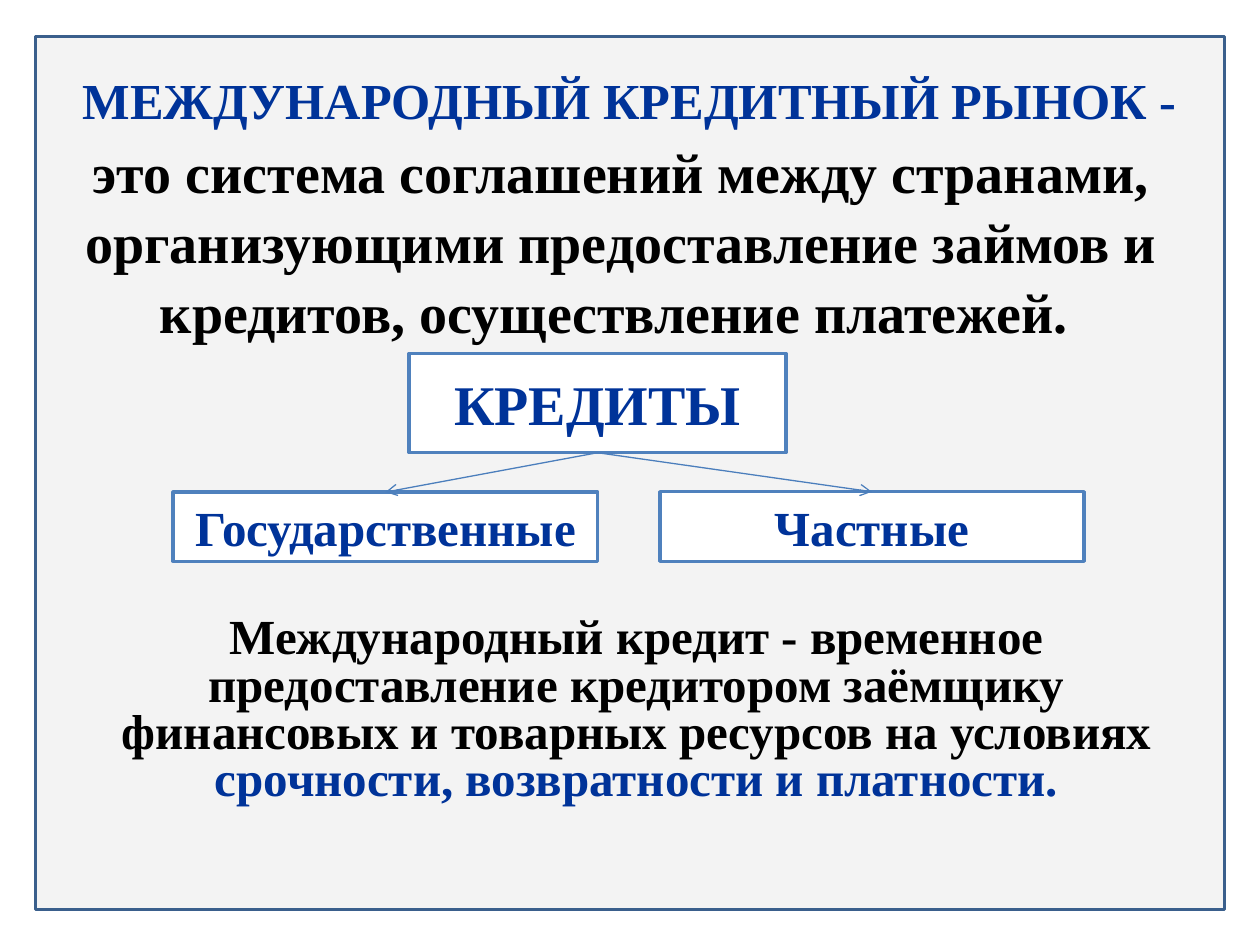
from lxml import etree
from pptx import Presentation
from pptx.dml.color import RGBColor
from pptx.enum.shapes import MSO_CONNECTOR, MSO_SHAPE
from pptx.enum.text import MSO_ANCHOR, PP_ALIGN
from pptx.oxml.ns import qn
from pptx.util import Pt

RECTANGLE = MSO_SHAPE.RECTANGLE
STRAIGHT = MSO_CONNECTOR.STRAIGHT
TOP, MIDDLE = MSO_ANCHOR.TOP, MSO_ANCHOR.MIDDLE
CENTER = PP_ALIGN.CENTER

FONT = "Times New Roman"
BLUE, BLACK, WHITE = "003399", "000000", "FFFFFF"
PANEL, PANEL_EDGE = "F2F2F2", "3A5F8C"
BOX_EDGE, ARROW = "4F81BD", "4B7EBC"

PANEL_AREA = (20.2, 20.9, 679.7, 499)
TEXTS = [
    ((36.7, 25.9, 646.6, 61.2), MIDDLE, 28.8, 1.0, 3.6,
     [("МЕЖДУНАРОДНЫЙ КРЕДИТНЫЙ РЫНОК -", BLUE)]),
    ((31, 71.3, 648, 444.2), TOP, 32, 1.04, 5.6,
     [("это система соглашений между странами, организующими "
       "предоставление займов и кредитов, осуществление платежей. ", BLACK)]),
    ((36.7, 349.2, 653.8, 144.7), TOP, 28, 0.8, 3.6,
     [("Международный кредит - временное предоставление кредитором "
       "заёмщику финансовых и товарных ресурсов на условиях", BLACK),
      ("срочности, возвратности и платности.", BLUE)]),
]
ROOT = ("КРЕДИТЫ", (233.7, 202, 215.6, 56.7), 32)
BRANCHES = [
    ("Государственные", (99, 281.2, 242.6, 39.6), 28),
    ("Частные", (377, 281, 242.4, 39.8), 28),
]


def color(value):
    return RGBColor.from_string(value)


def points(values):
    return [Pt(value) for value in values]


def write(shape, paragraphs, size, anchor, spacing=1.0, inset=3.6):
    frame = shape.text_frame
    frame.word_wrap = True
    frame.vertical_anchor = anchor
    frame.margin_top = Pt(inset)
    for index, (text, ink) in enumerate(paragraphs):
        para = frame.add_paragraph() if index else frame.paragraphs[0]
        para.alignment = CENTER
        para.line_spacing = spacing
        span = para.add_run()
        span.text = text
        span.font.name = FONT
        span.font.size = Pt(size)
        span.font.bold = True
        span.font.color.rgb = color(ink)


def add_box(page, area, fill, edge):
    box = page.shapes.add_shape(RECTANGLE, *points(area))
    box.shadow.inherit = False
    box.fill.solid()
    box.fill.fore_color.rgb = color(fill)
    box.line.color.rgb = color(edge)
    box.line.width = Pt(2)
    return box


def add_label(page, text, area, size):
    box = add_box(page, area, WHITE, BOX_EDGE)
    write(box, [(text, BLUE)], size, MIDDLE)


def add_arrow(page, parent, child):
    left, top, width, height = parent
    start = (left + width / 2, top + height)
    end = (child[0] + child[2] / 2, child[1])
    arrow = page.shapes.add_connector(STRAIGHT, *points(start + end))
    arrow.line.color.rgb = color(ARROW)
    arrow.line.width = Pt(0.75)
    etree.SubElement(arrow.line._get_or_add_ln(), qn("a:tailEnd"), type="arrow")
    etree.SubElement(arrow._element.spPr, qn("a:effectLst"))


def main():
    deck = Presentation()
    deck.slide_width, deck.slide_height = Pt(720), Pt(540)
    page = deck.slides.add_slide(deck.slide_layouts[6])

    panel = add_box(page, PANEL_AREA, PANEL, PANEL_EDGE)
    tint = panel._element.spPr.find(qn("a:solidFill"))[0]
    etree.SubElement(tint, qn("a:alpha"), val="90000")

    for area, anchor, size, spacing, inset, paragraphs in TEXTS:
        box = page.shapes.add_textbox(*points(area))
        write(box, paragraphs, size, anchor, spacing, inset)

    for label in [ROOT] + BRANCHES:
        add_label(page, *label)
    for branch in BRANCHES:
        add_arrow(page, ROOT[1], branch[1])

    deck.save("out.pptx")


if __name__ == "__main__":
    main()
